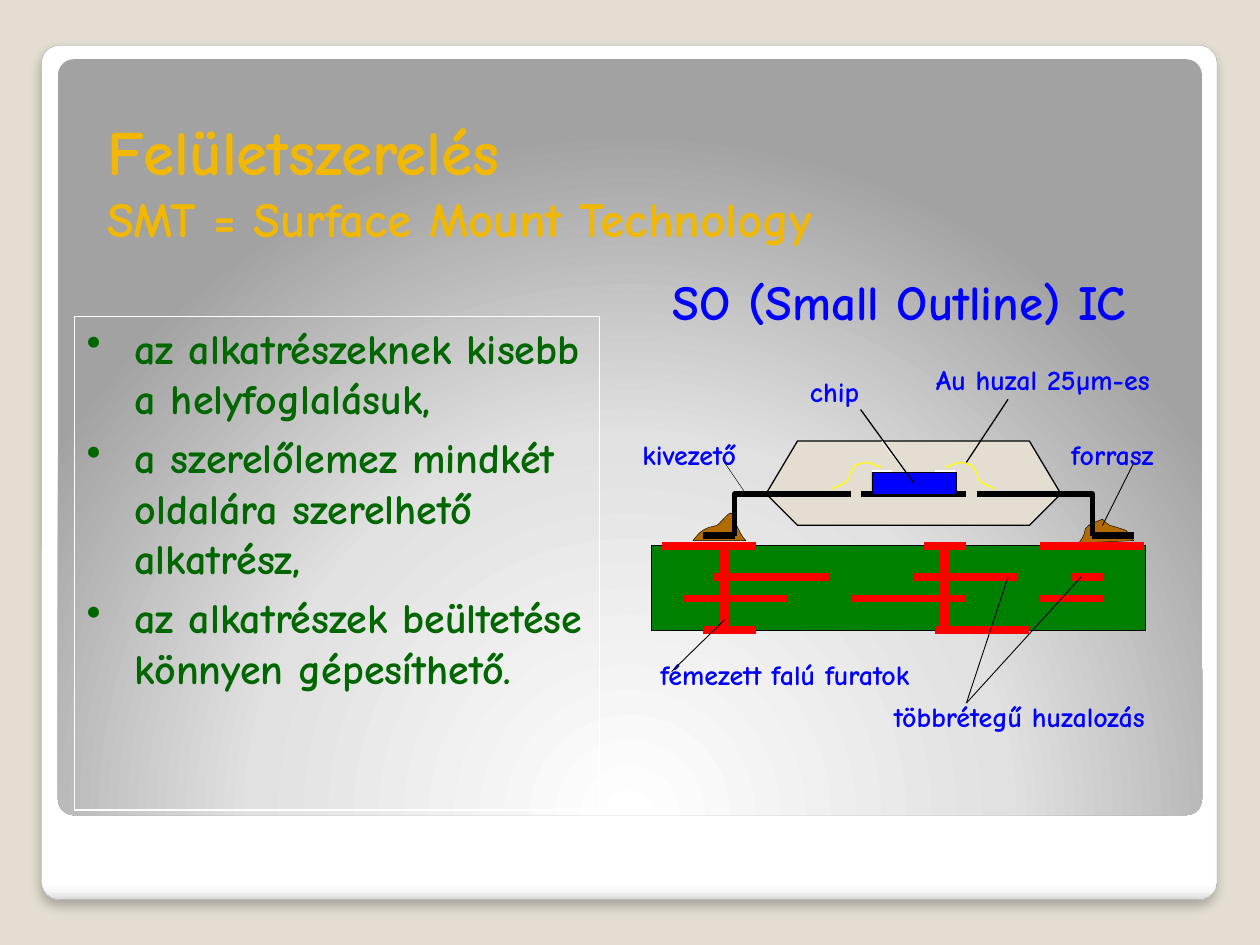
from dataclasses import dataclass
from typing import NamedTuple

from lxml import etree
from pptx import Presentation
from pptx.dml.color import RGBColor
from pptx.enum import shapes, text
from pptx.oxml import parse_xml
from pptx.oxml.ns import nsdecls, qn
from pptx.util import Cm, Pt


@dataclass(frozen=True)
class Theme:
    font: str = "Comic Neue"
    back: str = "E3DED1"
    gold: str = "F2B800"
    leaf: str = "006600"
    blue: str = "0000FF"
    board: str = "008000"
    copper: str = "FF0000"
    solder: str = "B26B02"
    wire: str = "FFFF00"
    black: str = "000000"
    white: str = "FFFFFF"
    edge: str = "A4A4A4"
    big: int = 36
    mid: int = 28
    body: int = 24
    small: int = 16


class Line(NamedTuple):
    x1: float
    y1: float
    x2: float
    y2: float
    color: str
    width: float


class Label(NamedTuple):
    words: str
    box: tuple
    size: int
    mid: bool = False


T = Theme()
AXIS = 7.25
PANEL = ((0, "FFFFFF"), (98, "FFFFFF"), (99, "F7F7F7"), (100, "DADADA"))
GLOW = ((0, "FFFFFF"), (55, "E1E1E1"), (100, "A2A2A2"))
DOWN = '<a:lin ang="5400000" scaled="0"/>'
ROUND = ('<a:path path="circle"><a:fillToRect l="50000" t="175000" '
         'r="50000" b="-75000"/></a:path>')
SHADE = ('<a:outerShdw %s blurRad="76200" dist="50800" dir="5400000" algn="t" '
         'rotWithShape="0"><a:srgbClr val="000000"><a:alpha val="25000"/>'
         '</a:srgbClr></a:outerShdw>' % nsdecls("a"))
BULLETS = ("az alkatrészeknek kisebb a helyfoglalásuk,",
           "a szerelőlemez mindkét oldalára szerelhető alkatrész,",
           "az alkatrészek beültetése könnyen gépesíthető.")
TRACKS = {4.33: ((5.25, 6), (7.33, 7.67), (8.25, 9.08)),
          4.58: ((5.67, 6.58), (7.25, 8.08), (8.5, 8.75)),
          4.75: ((5.42, 6.25), (6.75, 7.67), (8.25, 8.75)),
          5: ((5.58, 6), (7.42, 8.17))}
VIAS = (5.75, 7.5)
LABELS = (
    Label("Au huzal 25µm-es", (7.33, 2.83, 2.17, 0.64), T.small),
    Label("chip", (6.33, 2.92, 0.75, 0.37), T.small),
    Label("kivezető", (5, 3.42, 1.08, 0.37), T.small),
    Label("többrétegű huzalozás", (6.83, 5.5, 2.52, 0.37), T.small, True),
    Label("fémezett falú furatok", (4.92, 5.17, 2.62, 0.37), T.small, True),
    Label("SO (Small Outline) IC", (4.94, 2.1, 4.4, 0.57), T.mid, True),
    Label("forrasz", (8.33, 3.42, 1, 0.37), T.small, True))
RIGHT = ((8.56, 4.31), (8.58, 4.29), (8.59, 4.27), (8.6, 4.25),
         (8.61, 4.23), (8.61, 4.2), (8.62, 4.19), (8.65, 4.15), (8.71, 4.14),
         (8.75, 4.12), (8.77, 4.14), (8.79, 4.16), (8.81, 4.17), (8.85, 4.18),
         (8.94, 4.21), (8.94, 4.21), (8.98, 4.28), (8.96, 4.25), (9, 4.29))
LEFT = ((5.5, 4.29), (5.56, 4.21), (5.59, 4.19), (5.69, 4.17), (5.73, 4.14),
        (5.8, 4.04), (5.81, 4.08), (5.83, 4.13), (5.88, 4.26), (5.92, 4.29))
BOND = ((7.5, 3.71), (7.65, 3.66), (7.58, 3.66), (7.71, 3.69), (7.72, 3.71),
        (7.74, 3.73), (7.75, 3.75), (7.76, 3.77), (7.76, 3.8), (7.77, 3.81),
        (7.79, 3.83), (7.81, 3.84), (7.83, 3.85), (7.85, 3.86), (7.9, 3.88),
        (7.9, 3.88))
LEAD = ((7.75, 3.92), (8.67, 3.92), (8.67, 4))
CASE = ((6.08, 3.92), (6.33, 3.5), (8.17, 3.5), (8.42, 3.92), (8.17, 4.17),
        (6.33, 4.17))


def inch(n: float) -> int:
    return Cm(n * 2.54)


def paint(shape, fill: str | None, line: str, width: float) -> None:
    shape.shadow.inherit = False
    if fill:
        shape.fill.solid()
        shape.fill.fore_color.rgb = RGBColor.from_string(fill)
    else:
        shape.fill.background()
    shape.line.color.rgb = RGBColor.from_string(line)
    shape.line.width = Pt(width)


def block(slide, kind, box: tuple, fill: str | None, line: str, width: float):
    shape = slide.shapes.add_shape(kind, *map(inch, box))
    paint(shape, fill, line, width)
    return shape


def panel(slide, box: tuple, stops: tuple, course: str):
    shape = block(slide, shapes.MSO_SHAPE.ROUNDED_RECTANGLE, box, T.white, T.edge, 0.16)
    shape.adjustments[0] = 0.021
    marks = "".join(f'<a:gs pos="{p * 1000}"><a:srgbClr val="{c}"/></a:gs>' for p, c in stops)
    grad = parse_xml(f'<a:gradFill {nsdecls("a")} rotWithShape="1">'
                     f'<a:gsLst>{marks}</a:gsLst>{course}</a:gradFill>')
    props = shape.element.spPr
    props.replace(props.find(qn("a:solidFill")), grad)
    return shape


def curve(knots: tuple, steps: int = 6) -> list:
    out = [knots[0]]
    for i in range(0, len(knots) - 1, 3):
        for k in range(1, steps + 1):
            t = k / steps
            parts = ((1 - t) ** 3, 3 * t * (1 - t) ** 2, 3 * t * t * (1 - t), t ** 3)
            out.append(tuple(sum(w * p[a] for w, p in zip(parts, knots[i:i + 4]))
                             for a in (0, 1)))
    return out


def flip(dots) -> list:
    return [(2 * AXIS - x, y) for x, y in dots]


def form(slide, dots, fill: str | None, line: str, width: float) -> None:
    spots = [(inch(x), inch(y)) for x, y in dots]
    pen = slide.shapes.build_freeform(*spots[0])
    pen.add_line_segments(spots[1:], close=fill is not None)
    paint(pen.convert_to_shape(), fill, line, width)


def stroke(slide, item: Line) -> None:
    rod = slide.shapes.add_connector(shapes.MSO_CONNECTOR.STRAIGHT, *map(inch, item[:4]))
    rod.line.color.rgb = RGBColor.from_string(item.color)
    rod.line.width = Pt(item.width)
    etree.SubElement(rod.element.spPr, qn("a:effectLst"))


def write(para, words: str, size: int, color: str) -> None:
    run = para.add_run()
    run.text = words
    run.font.name, run.font.size, run.font.bold = T.font, Pt(size), True
    run.font.color.rgb = RGBColor.from_string(color)


def label(slide, item: Label) -> None:
    frame = slide.shapes.add_textbox(*map(inch, item.box)).text_frame
    frame.word_wrap = not item.mid
    frame.auto_size = text.MSO_AUTO_SIZE.SHAPE_TO_FIT_TEXT
    para = frame.paragraphs[0]
    if item.mid:
        frame.vertical_anchor = text.MSO_ANCHOR.MIDDLE
        para.alignment = text.PP_ALIGN.CENTER
    write(para, item.words, item.size, T.blue)


def head(slide, under) -> None:
    title = slide.shapes.title
    under.element.addnext(title.element)
    title.left, title.top, title.width, title.height = map(inch, (0.75, 0.73, 8.5, 1.28))
    frame = title.text_frame
    frame.vertical_anchor = text.MSO_ANCHOR.BOTTOM
    para = frame.paragraphs[0]
    para.alignment = text.PP_ALIGN.LEFT
    write(para, "Felületszerelés", T.big, T.gold)
    para.add_line_break()
    write(para, "SMT = Surface Mount Technology", T.mid, T.gold)


def points(slide) -> None:
    box = block(slide, shapes.MSO_SHAPE.RECTANGLE, (0.59, 2.51, 4.17, 3.92), None, T.white, 0.75)
    frame = box.text_frame
    frame.word_wrap = True
    frame.vertical_anchor = text.MSO_ANCHOR.TOP
    for i, words in enumerate(BULLETS):
        para = frame.add_paragraph() if i else frame.paragraphs[0]
        para.alignment = text.PP_ALIGN.LEFT
        para.space_before = Pt(5)
        props = para._p.get_or_add_pPr()
        props.set("marL", str(inch(0.38)))
        props.set("indent", str(-inch(0.38)))
        etree.SubElement(props, qn("a:buChar")).set("char", "•")
        write(para, words, T.body, T.leaf)


def chip(slide) -> None:
    rect = shapes.MSO_SHAPE.RECTANGLE
    form(slide, CASE, T.back, T.black, 0.75)
    for x in (6.92, 7.42):
        stroke(slide, Line(x, 3.75, x + 0.16, 3.75, T.white, 3))
    stroke(slide, Line(6.83, 3.92, 7.67, 3.92, T.black, 3))
    stroke(slide, Line(7, 3.5, 7.25, 3.83, T.white, 0.75))
    bond = curve(BOND)
    for dots, color, width in ((bond, T.wire, 0.75), (LEAD, T.black, 3)):
        form(slide, dots, None, color, width)
        form(slide, flip(dots), None, color, width)
    block(slide, rect, (6.92, 3.75, 0.67, 0.17), T.blue, T.black, 0.25)
    for x, end in ((8.67, 9), (5.83, 5.58)):
        stroke(slide, Line(x, 3.92, x, 4.25, T.black, 3))
        stroke(slide, Line(x, 4.25, end, 4.25, T.black, 4.5))


def board(slide) -> None:
    block(slide, shapes.MSO_SHAPE.RECTANGLE, (5.17, 4.33, 3.92, 0.67), T.board, T.black, 0.25)
    for y, spans in TRACKS.items():
        for x1, x2 in spans:
            stroke(slide, Line(x1, y, x2, y, T.copper, 4.5))
    for x in VIAS:
        stroke(slide, Line(x, 4.33, x, 5, T.copper, 6))


def main() -> None:
    deck = Presentation()
    deck.slide_width, deck.slide_height = inch(10), inch(7.5)
    slide = deck.slides.add_slide(deck.slide_layouts[5])
    slide.background.fill.solid()
    slide.background.fill.fore_color.rgb = RGBColor.from_string(T.back)
    outer = panel(slide, (0.33, 0.36, 9.33, 6.78), PANEL, DOWN)
    outer.element.spPr.find(qn("a:effectLst")).append(parse_xml(SHADE))
    inner = panel(slide, (0.46, 0.47, 9.08, 6), GLOW, ROUND)
    inner.line.fill.background()
    head(slide, inner)
    for knots in (RIGHT, LEFT):
        form(slide, curve(knots), T.solder, T.black, 0.25)
    points(slide)
    chip(slide)
    board(slide)
    for item in LABELS:
        label(slide, item)
    for *ends, width in ((7.67, 3.67, 8, 3.17, 0.75), (6.83, 3.25, 7.25, 3.83, 0.75),
                         (5.75, 3.67, 5.92, 3.92, 0.25), (8, 4.58, 7.67, 5.58, 0.5),
                         (8.58, 4.58, 7.67, 5.58, 0.5), (5.75, 4.92, 5.33, 5.33, 0.5),
                         (8.75, 4.17, 9, 3.67, 0.5)):
        stroke(slide, Line(*ends, T.black, width))
    deck.save("out.pptx")


if __name__ == "__main__":
    main()
